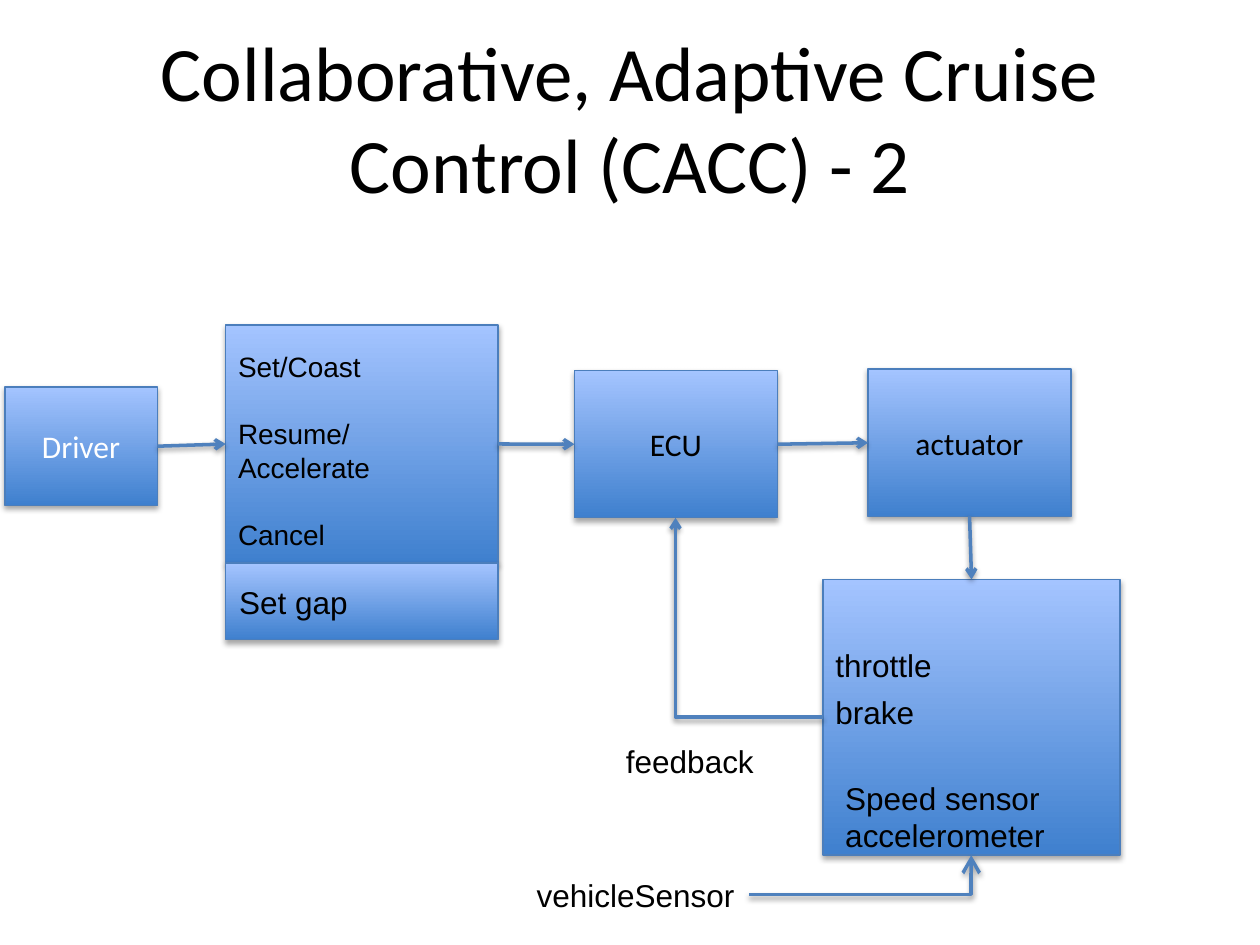
from lxml import etree
from pptx import Presentation
from pptx.dml.color import RGBColor
from pptx.enum.shapes import MSO_CONNECTOR, MSO_SHAPE
from pptx.enum.text import MSO_ANCHOR, PP_ALIGN
from pptx.oxml import parse_xml
from pptx.oxml.ns import nsdecls, qn
from pptx.util import Cm, Pt

RECT = MSO_SHAPE.RECTANGLE
LINE, ELBOW = MSO_CONNECTOR.STRAIGHT, MSO_CONNECTOR.ELBOW
LEFT, MID = PP_ALIGN.LEFT, PP_ALIGN.CENTER
CENTER = MSO_ANCHOR.MIDDLE
color = RGBColor.from_string


def write(frame, text, size=18, font="Arial", ink="000000", align=LEFT, gap=0, wrap=False):
    frame.word_wrap = wrap
    frame.text = text
    for i, para in enumerate(frame.paragraphs):
        para.alignment = align
        para.space_before = Pt(gap if i else 0)
        para.font.size = Pt(size)
        para.font.name = font
        para.font.color.rgb = color(ink)


def shade(shape, dist, alpha):
    props = shape._element.spPr
    for old in props.findall(qn("a:effectLst")):
        props.remove(old)
    props.append(parse_xml(
        f'<a:effectLst {nsdecls("a")}>'
        f'<a:outerShdw blurRad="40000" dist="{dist}" dir="5400000" rotWithShape="0">'
        f'<a:srgbClr val="000000"><a:alpha val="{alpha}000"/></a:srgbClr>'
        '</a:outerShdw></a:effectLst>'))


deck = Presentation()
deck.slide_width, deck.slide_height = Cm(25.4), Cm(19.05)
slide = deck.slides.add_slide(deck.slide_layouts[5])
shapes = slide.shapes

# Title
title = shapes.title
title.left, title.top, title.width, title.height = Cm(1.27), Cm(0.76), Cm(22.86), Cm(3.18)
title.text_frame.vertical_anchor = CENTER
write(title.text_frame, "Collaborative, Adaptive Cruise Control (CACC) - 2",
      size=44, font="Calibri", align=MID, wrap=True)

# Blocks: name, left, top, width, height, text, text colour
blocks = [
    ("driver", 0.1, 7.8, 3.07, 2.39, "Driver", "FFFFFF"),
    ("panel", 4.55, 6.55, 5.49, 4.8, "", "000000"),
    ("ecu", 11.58, 7.47, 4.09, 2.97, "ECU", "000000"),
    ("gap", 4.55, 11.35, 5.49, 1.55, "", "000000"),
    ("act", 17.5, 7.44, 4.09, 2.97, "actuator", "000000"),
    ("plant", 16.59, 11.68, 5.99, 5.56, "", "000000"),
]
box = {}
for name, x, y, w, h, text, ink in blocks:
    rect = shapes.add_shape(RECT, Cm(x), Cm(y), Cm(w), Cm(h))
    rect.fill.gradient()
    rect.fill.gradient_angle = 90
    for stop, tone in zip(rect.fill.gradient_stops, ("3F80CE", "A4C4FF")):
        stop.color.rgb = color(tone)
    rect.line.color.rgb = color("4B7EBC")
    rect.line.width = Pt(0.75)
    shade(rect, 23000, 35)
    if text:
        rect.text_frame.vertical_anchor = CENTER
        write(rect.text_frame, text, font="Calibri", ink=ink, align=MID, wrap=True)
    box[name] = rect

# Straight links between blocks, then the two bent links
links = []
for start, out, end, side in [("driver", 3, "panel", 1), ("panel", 3, "ecu", 1),
                              ("ecu", 3, "act", 1), ("act", 2, "plant", 0)]:
    link = shapes.add_connector(LINE, 0, 0, 0, 0)
    link.begin_connect(box[start], out)
    link.end_connect(box[end], side)
    links.append((link, "med"))
for x1, y1, x2, y2, head in [(16.59, 14.46, 13.62, 10.44, "med"),
                             (15.1, 18.03, 19.58, 17.24, "lg")]:
    link = shapes.add_connector(ELBOW, Cm(x1), Cm(y1), Cm(x2), Cm(y2))
    link._element.spPr.find(qn("a:prstGeom")).set("prst", "bentConnector2")
    links.append((link, head))
for link, head in links:
    link.line.color.rgb = color("4F81BD")
    link.line.width = Pt(2)
    etree.SubElement(link.line._get_or_add_ln(), qn("a:tailEnd"),
                     type="arrow", w=head, len=head)
    shade(link, 20000, 38)

# Labels: left, top, width, height, text, format
labels = [
    (4.55, 6.93, 4.93, 3.63, "Set/Coast\nResume/Accelerate\nCancel",
     dict(size=16, gap=19, wrap=True)),
    (4.57, 11.63, 2.72, 1.02, "Set gap", {}),
    (16.59, 12.9, 2.46, 1.02, "throttle", {}),
    (16.59, 13.84, 2.11, 1.02, "brake", {}),
    (16.79, 15.57, 4.57, 1.8, "Speed sensor\naccelerometer", {}),
    (12.37, 14.83, 3.12, 1.02, "feedback", {}),
    (10.57, 17.53, 4.55, 1.02, "vehicleSensor", {}),
]
for x, y, w, h, text, style in labels:
    label = shapes.add_textbox(Cm(x), Cm(y), Cm(w), Cm(h))
    write(label.text_frame, text, **style)

deck.save("out.pptx")
